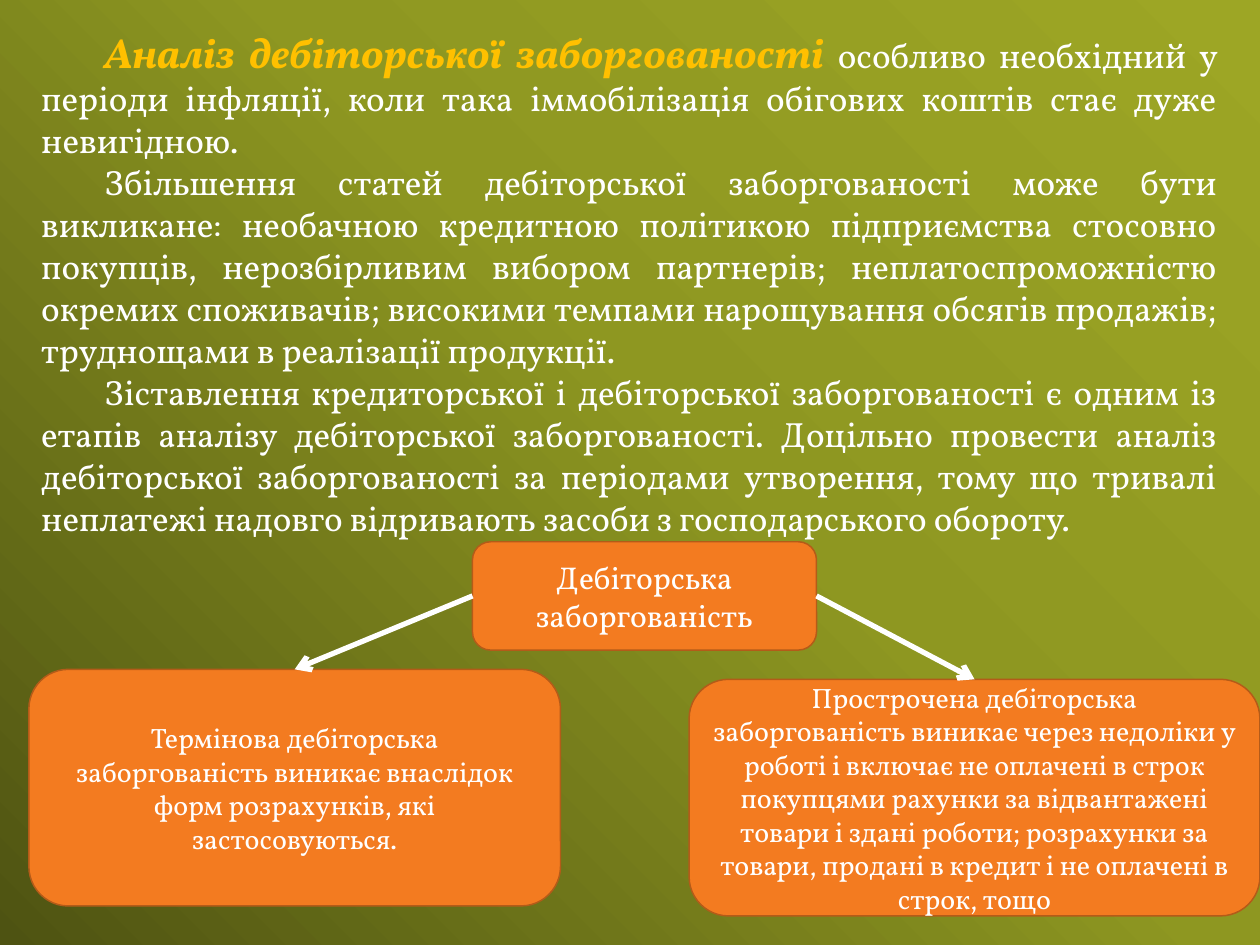
"""Build a slide on receivables analysis with a three-box diagram."""
from copy import deepcopy

from lxml import etree
from pptx import Presentation
from pptx.dml.color import RGBColor
from pptx.enum.shapes import MSO_CONNECTOR, MSO_SHAPE
from pptx.enum.text import MSO_ANCHOR, MSO_AUTO_SIZE, PP_ALIGN
from pptx.oxml.ns import qn
from pptx.util import Pt

ROUND = MSO_SHAPE.ROUNDED_RECTANGLE
LINE = MSO_CONNECTOR.STRAIGHT
MIDDLE = MSO_ANCHOR.MIDDLE
GROW = MSO_AUTO_SIZE.SHAPE_TO_FIT_TEXT
JUSTIFY, CENTER = PP_ALIGN.JUSTIFY, PP_ALIGN.CENTER
TOP, LEFT, RIGHT = 0, 1, 3
FONT = "Vollkorn"
HEX = {"light": "9DA625", "mid": "8E9721", "dark": "4E5312", "white": "FFFFFF",
       "gold": "FFC000", "box": "F37B20", "edge": "B45B18"}
RGB = {name: RGBColor.from_string(code) for name, code in HEX.items()}


def add_run(para, text, size, color="white", strong=False):
    """Add one formatted run to a paragraph."""
    run = para.add_run()
    run.text = text
    font = run.font
    font.name, font.size = FONT, Pt(size)
    font.bold = font.italic = strong
    font.color.rgb = RGB[color]


prs = Presentation()
prs.slide_width, prs.slide_height = Pt(720), Pt(540)
slide = prs.slides.add_slide(prs.slide_layouts[6])
shapes = slide.shapes

fill = slide.background.fill
fill.gradient()
fill.gradient_angle = 225
stops = next(slide.element.iter(qn("a:gsLst")))
stops.append(deepcopy(stops[0]))
for stop, (spot, name) in zip(fill.gradient_stops,
                              [(0, "light"), (0.45, "mid"), (1, "dark")]):
    stop.position = spot
    stop.color.rgb = RGB[name]

body = [
    [("\t", 24),
     ("Аналіз дебіторської заборгованості ", 24, "gold", True),
     ("особливо необхідний у періоди інфляції, коли така іммобілізація "
      "обігових коштів стає дуже невигідною. ", 20)],
    [("\tЗбільшення статей дебіторської заборгованості може бути викликане: "
      "необачною кредитною політикою підприємства стосовно покупців, "
      "нерозбірливим вибором партнерів; неплатоспроможністю окремих "
      "споживачів; високими темпами нарощування обсягів продажів; "
      "труднощами в реалізації продукції.", 20)],
    [("\tЗіставлення кредиторської і дебіторської заборгованості є одним із "
      "етапів аналізу дебіторської заборгованості. Доцільно провести аналіз "
      "дебіторської заборгованості за періодами утворення, тому що тривалі "
      "неплатежі надовго відривають засоби з господарського обороту.", 20)],
]
frame = shapes.add_textbox(Pt(16.5), Pt(11.5), Pt(686.2), Pt(329)).text_frame
frame.word_wrap = True
frame.auto_size = GROW
for i, runs in enumerate(body):
    para = frame.add_paragraph() if i else frame.paragraphs[0]
    para.alignment = JUSTIFY
    for run in runs:
        add_run(para, *run)

nodes = [
    ((270, 309.6, 196.6, 61.9), 18, "Дебіторська заборгованість"),
    ((16.5, 382.5, 303.8, 135.2), 16,
     "Термінова дебіторська заборгованість виникає внаслідок форм "
     "розрахунків, які застосовуються."),
    ((393.8, 388.2, 326.2, 135.2), 16,
     "Прострочена дебіторська заборгованість виникає через недоліки у роботі "
     "і включає не оплачені в строк покупцями рахунки за відвантажені товари "
     "і здані роботи; розрахунки за товари, продані в кредит і не оплачені в "
     "строк, тощо"),
]
boxes = []
for place, size, text in nodes:
    box = shapes.add_shape(ROUND, *map(Pt, place))
    box.shadow.inherit = False
    box.fill.solid()
    box.fill.fore_color.rgb = RGB["box"]
    box.line.color.rgb = RGB["edge"]
    box.line.width = Pt(0.85)
    frame = box.text_frame
    frame.word_wrap = True
    frame.vertical_anchor = MIDDLE
    para = frame.paragraphs[0]
    para.alignment = CENTER
    add_run(para, text, size)
    boxes.append(box)

root, due, late = boxes
for side, child in ((LEFT, due), (RIGHT, late)):
    arrow = shapes.add_connector(LINE, 0, 0, 0, 0)
    arrow.begin_connect(root, side)
    arrow.end_connect(child, TOP)
    arrow.line.color.rgb = RGB["white"]
    arrow.line.width = Pt(3)
    props = arrow.element.spPr
    etree.SubElement(props.find(qn("a:ln")), qn("a:tailEnd"), type="arrow")
    etree.SubElement(props, qn("a:effectLst"))

prs.save("out.pptx")
